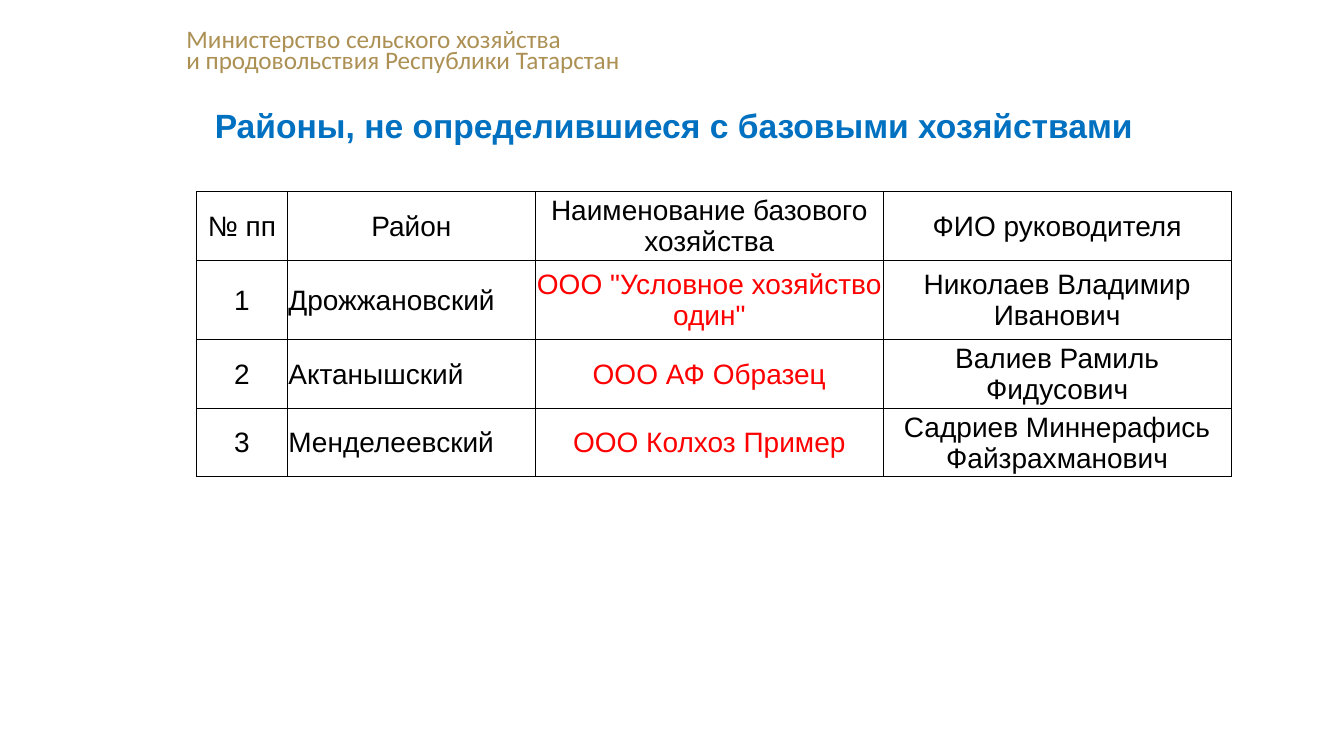
from lxml import etree
from pptx import Presentation
from pptx.dml.color import RGBColor
from pptx.enum.text import MSO_ANCHOR, MSO_AUTO_SIZE, PP_ALIGN
from pptx.oxml.ns import qn
from pptx.util import Inches, Pt

LEFT, CENTER = PP_ALIGN.LEFT, PP_ALIGN.CENTER
TOP, MIDDLE = MSO_ANCHOR.TOP, MSO_ANCHOR.MIDDLE
GROW = MSO_AUTO_SIZE.SHAPE_TO_FIT_TEXT

COLORS = {"gold": "AC9054", "blue": "0070C0", "red": "FF0000",
          "black": "000000", "white": "FFFFFF"}

COLUMN_WIDTHS = [0.9, 2.46, 3.45, 3.45]
ROW_HEIGHTS = [0.68, 0.79, 0.68, 0.68]
HEADINGS = ["№ пп", "Район", "Наименование базового хозяйства", "ФИО руководителя"]
DISTRICTS = [
    ["1", "Дрожжановский", 'ООО "Условное хозяйство один"', "Николаев Владимир Иванович"],
    ["2", "Актанышский", "ООО АФ Образец", "Валиев Рамиль Фидусович"],
    ["3", "Менделеевский", "ООО Колхоз Пример", "Садриев Миннерафись Файзрахманович"],
]
DISTRICT_COLUMN, FARM_COLUMN = 1, 2


def write_text(frame, text, *, size, font="Arial", color="black", bold=False,
               align=LEFT, spacing=None):
    """Fill a text frame, one paragraph per line of text."""
    for number, line in enumerate(text.split("\n")):
        paragraph = frame.add_paragraph() if number else frame.paragraphs[0]
        paragraph.alignment = align
        if spacing:
            paragraph.line_spacing = spacing
        run = paragraph.add_run()
        run.text = line
        run.font.size = Pt(size)
        run.font.name = font
        run.font.bold = bold
        run.font.color.rgb = RGBColor.from_string(COLORS[color])


class SlideBuilder:
    """Holds the slide and draws each kind of element on it."""

    def __init__(self, presentation):
        self.slide = presentation.slides.add_slide(presentation.slide_layouts[5])

    def title(self, text, left, top, width, height, **style):
        title = self.slide.shapes.title
        title.left, title.top = Inches(left), Inches(top)
        title.width, title.height = Inches(width), Inches(height)
        frame = title.text_frame
        frame.word_wrap = True
        frame.auto_size = GROW
        frame.vertical_anchor = TOP
        write_text(frame, text, **style)

    def label(self, text, left, top, width, height, **style):
        label = self.slide.shapes.add_textbox(
            Inches(left), Inches(top), Inches(width), Inches(height))
        label.text_frame.word_wrap = False
        label.text_frame.auto_size = GROW
        write_text(label.text_frame, text, **style)

    def table(self, rows, left, top):
        table = self.slide.shapes.add_table(
            len(rows), len(COLUMN_WIDTHS), Inches(left), Inches(top),
            Inches(sum(COLUMN_WIDTHS)), Inches(sum(ROW_HEIGHTS))).table
        table.first_row = table.horz_banding = False
        for column, width in zip(table.columns, COLUMN_WIDTHS):
            column.width = Inches(width)
        for row, height in zip(table.rows, ROW_HEIGHTS):
            row.height = Inches(height)
        for r, values in enumerate(rows):
            for c, value in enumerate(values):
                self.cell(table.cell(r, c), value,
                          align=LEFT if r and c == DISTRICT_COLUMN else CENTER,
                          color="red" if r and c == FARM_COLUMN else "black")

    def cell(self, cell, text, **style):
        cell.margin_left = cell.margin_right = cell.margin_top = Inches(0.01)
        cell.margin_bottom = 0
        cell.vertical_anchor = MIDDLE
        cell.fill.solid()
        cell.fill.fore_color.rgb = RGBColor.from_string(COLORS["white"])
        write_text(cell.text_frame, text, size=20, **style)
        # Borders go before the fill in the cell properties
        properties = cell.fill._xPr
        for position, side in enumerate(("a:lnL", "a:lnR", "a:lnT", "a:lnB")):
            border = etree.Element(qn(side), w=str(Pt(0.5)))
            fill = etree.SubElement(border, qn("a:solidFill"))
            etree.SubElement(fill, qn("a:srgbClr"), val=COLORS["black"])
            properties.insert(position, border)


def main():
    presentation = Presentation()
    presentation.slide_width, presentation.slide_height = Inches(13.33), Inches(7.5)
    builder = SlideBuilder(presentation)

    # Ministry name
    builder.label("Министерство сельского хозяйства\nи продовольствия Республики Татарстан",
                  1.75, 0.26, 4.55, 0.54,
                  size=18, font="Calibri", color="gold", spacing=0.7)

    # Slide title
    builder.title("Районы, не определившиеся с базовыми хозяйствами",
                  2.03, 0.99, 11.08, 0.5, size=24, color="blue", bold=True)

    # Districts and their farms
    builder.table([HEADINGS] + DISTRICTS, 1.95, 1.9)

    presentation.save("out.pptx")


if __name__ == "__main__":
    main()
